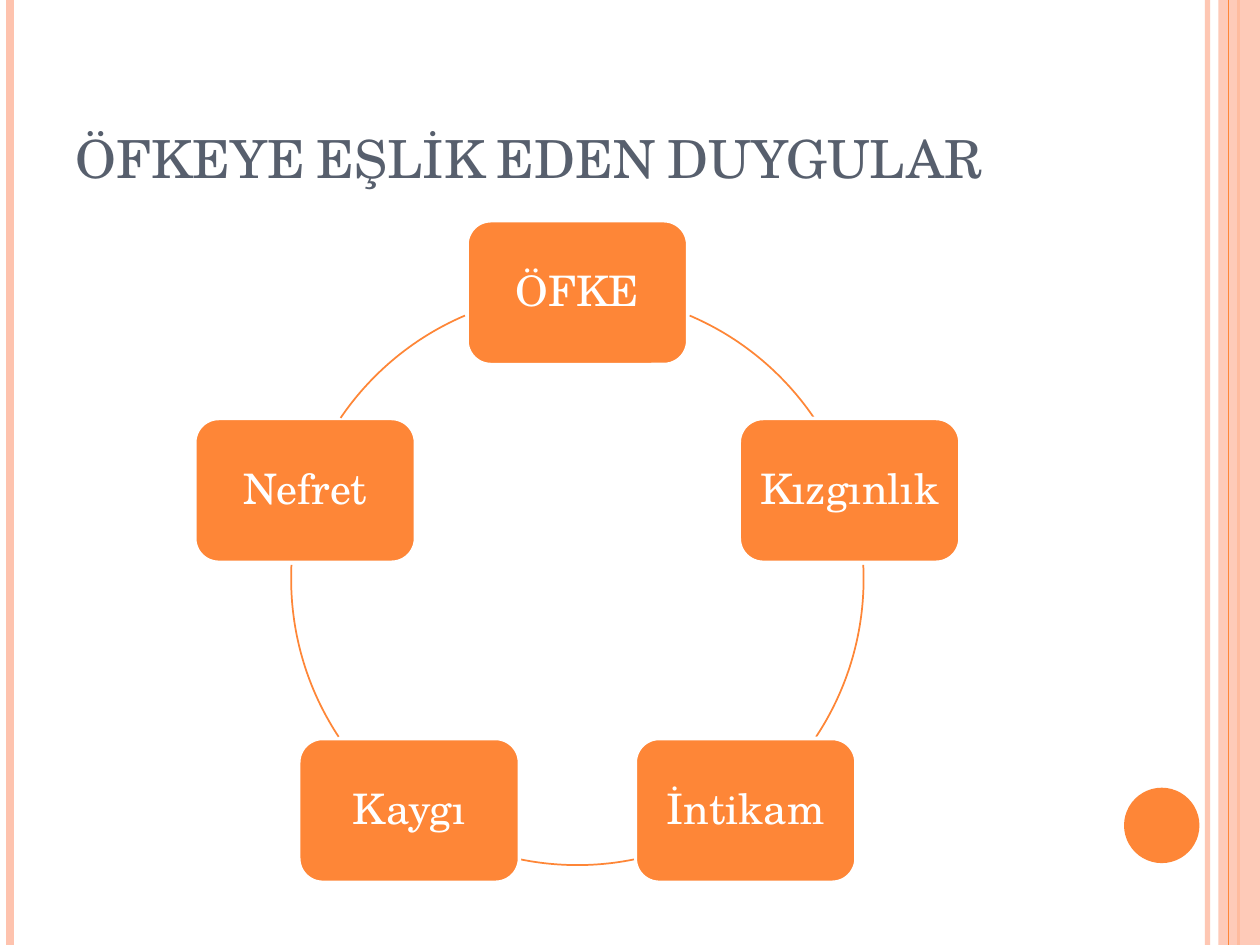
import math

import pptx
import pptx.dml.color
import pptx.enum.shapes
import pptx.enum.text
import pptx.util
from lxml import etree
from pptx.util import Cm, Pt

FONT = "TeX Gyre Schola"
ORANGE, PEACH, SLATE, WHITE = "FE8637", "FEC3AE", "575F6D", "FFFFFF"
TITLE = "ÖFKEYE EŞLİK EDEN DUYGULAR"
EMOTIONS = ["ÖFKE", "Kızgınlık", "İntikam", "Kaygı", "Nefret"]
# start and end angle of each arc, clockwise from three o'clock
ARCS = [(293.1, 325.8), (357.2, 33.5), (78.6, 101.4), (146.5, 182.8), (214.2, 246.9)]
# x, colour, width in points, opacity in percent
RULES_BEHIND = [(24.34, PEACH, 3, 93), (0.21, PEACH, 4.5, 100), (24.97, ORANGE, 1.5, 100)]
RULES_FRONT = [(24.77, ORANGE, 0.75, 100)]

SLIDE_WIDTH, SLIDE_HEIGHT = 25.4, 19.05
CENTER_X, CENTER_Y, RADIUS = 11.64, 11.67, 5.77
BOX_WIDTH, BOX_HEIGHT = 4.45, 2.9
SHAPES = pptx.enum.shapes.MSO_SHAPE
ANCHOR = pptx.enum.text.MSO_ANCHOR
ALIGN = pptx.enum.text.PP_ALIGN
DRAWING = "http://schemas.openxmlformats.org/drawingml/2006/main"


def paint(color_format, color):
    color_format.rgb = pptx.dml.color.RGBColor.from_string(color)


def set_opacity(shape, percent):
    """Make the first colour of a shape or connector partly transparent."""
    if percent < 100:
        element = shape._element.spPr.find(f".//{{{DRAWING}}}srgbClr")
        etree.SubElement(element, f"{{{DRAWING}}}alpha", val=str(percent * 1000))


def apply(target, **values):
    for name, value in values.items():
        setattr(target, name, value)


def add_shape(page, kind, left, top, width, height, fill=None, line=None, weight=1):
    shape = page.shapes.add_shape(kind, Cm(left), Cm(top), Cm(width), Cm(height))
    shape.shadow.inherit = False
    if fill:
        shape.fill.solid()
        paint(shape.fill.fore_color, fill)
    else:
        shape.fill.background()
    if line:
        paint(shape.line.color, line)
        shape.line.width = Pt(weight)
    else:
        shape.line.fill.background()
    return shape


def add_rules(page, rules):
    for x, color, weight, opacity in rules:
        rule = page.shapes.add_connector(
            pptx.enum.shapes.MSO_CONNECTOR.STRAIGHT, Cm(x), 0, Cm(x), Cm(SLIDE_HEIGHT))
        paint(rule.line.color, color)
        rule.line.width = Pt(weight)
        set_opacity(rule, opacity)
        etree.SubElement(rule._element.spPr, f"{{{DRAWING}}}effectLst")


def write(frame, text, size, color, align, anchor):
    apply(frame, word_wrap=True, vertical_anchor=anchor,
          auto_size=pptx.enum.text.MSO_AUTO_SIZE.NONE)
    para = frame.paragraphs[0]
    para.alignment = align
    span = para.add_run()
    span.text = text
    apply(span.font, name=FONT, size=Pt(size))
    paint(span.font.color, color)
    return para


def add_cycle(page):
    step = 2 * math.pi / len(EMOTIONS)
    for index, (emotion, angles) in enumerate(zip(EMOTIONS, ARCS)):
        angle = index * step - math.pi / 2
        left = CENTER_X + RADIUS * math.cos(angle) - BOX_WIDTH / 2
        top = CENTER_Y + RADIUS * math.sin(angle) - BOX_HEIGHT / 2
        box = add_shape(page, SHAPES.ROUNDED_RECTANGLE, left, top, BOX_WIDTH, BOX_HEIGHT,
                        fill=ORANGE, line=WHITE, weight=2)
        apply(box.text_frame, margin_left=Cm(0.1), margin_right=Cm(0.1))
        para = write(box.text_frame, emotion, 24, WHITE, ALIGN.CENTER, ANCHOR.MIDDLE)
        para.line_spacing = 0.9

        arc = add_shape(page, SHAPES.ARC, CENTER_X - RADIUS, CENTER_Y - RADIUS,
                        2 * RADIUS, 2 * RADIUS, line=ORANGE)
        for position, degrees in enumerate(angles):
            arc.adjustments[position] = degrees * 0.6  # 60000 units a degree, over 100000


def main():
    deck = pptx.Presentation()
    apply(deck, slide_width=Cm(SLIDE_WIDTH), slide_height=Cm(SLIDE_HEIGHT))
    page = deck.slides.add_slide(deck.slide_layouts[5])

    add_rules(page, RULES_BEHIND)
    band = add_shape(page, SHAPES.RECTANGLE, 24.56, 0, 0.84, SLIDE_HEIGHT, fill=PEACH)
    set_opacity(band, 87)
    add_rules(page, RULES_FRONT)
    add_shape(page, SHAPES.OVAL, 22.66, 15.88, 1.52, 1.52, fill=ORANGE)

    title = page.shapes.title
    apply(title, left=Cm(1.27), top=Cm(0.76), width=Cm(20.75), height=Cm(3.18))
    para = write(title.text_frame, TITLE, 30, SLATE, ALIGN.LEFT, ANCHOR.BOTTOM)
    para.runs[0].font._element.set("cap", "small")

    add_cycle(page)
    deck.save("out.pptx")


if __name__ == "__main__":
    main()
